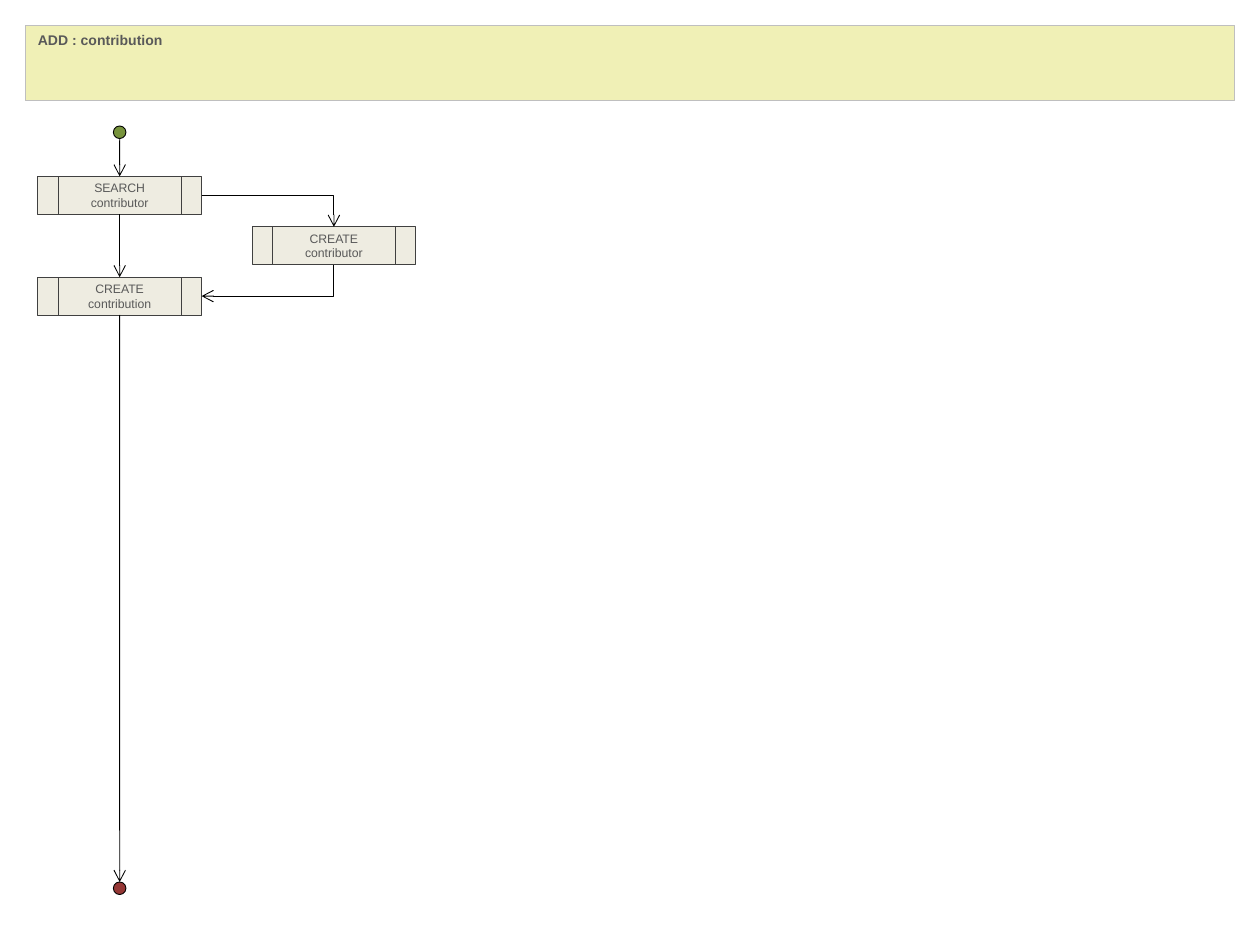
"""Build the flow diagram slide for adding a contribution."""
from lxml.etree import SubElement
from pptx import Presentation
from pptx.dml.color import RGBColor
from pptx.enum.shapes import MSO_CONNECTOR as CONNECTOR, MSO_SHAPE as SHAPE
from pptx.enum.text import MSO_ANCHOR as ANCHOR, MSO_AUTO_SIZE as AUTO_SIZE, PP_ALIGN as ALIGN
from pptx.oxml.ns import qn
from pptx.util import Inches, Pt

BLACK = RGBColor(0x00, 0x00, 0x00)
GREEN = RGBColor(0x77, 0x93, 0x3C)
RED = RGBColor(0x95, 0x37, 0x35)
YELLOW = RGBColor(0xF0, 0xF0, 0xB6)
BEIGE = RGBColor(0xEE, 0xEC, 0xE1)
LIGHT_GREY = RGBColor(0xBF, 0xBF, 0xBF)
DARK_GREY = RGBColor(0x40, 0x40, 0x40)
TEXT_GREY = RGBColor(0x59, 0x59, 0x59)

STEP_WIDTH, STEP_HEIGHT = 1.3, 0.3
DOT_SIZE = 0.1
MAIN_X = 0.95
SIDE_X = 2.65


def style_shape(shape, fill_color, line_color):
    shape.fill.solid()
    shape.fill.fore_color.rgb = fill_color
    shape.line.color.rgb = line_color
    shape.line.width = Pt(0.5)
    shape.shadow.inherit = False


def write_text(shape, text, align, anchor, font_format):
    frame = shape.text_frame
    frame.word_wrap = True
    frame.auto_size = AUTO_SIZE.NONE
    frame.vertical_anchor = anchor
    para = frame.paragraphs[0]
    para.alignment = align
    span = para.add_run()
    span.text = text
    for name, value in font_format.items():
        setattr(span.font, name, value)
    span.font.color.rgb = TEXT_GREY


deck = Presentation()
deck.slide_width, deck.slide_height = Inches(10), Inches(7.5)
page = deck.slides.add_slide(deck.slide_layouts[5])

title = page.shapes.title
title_place = {"left": 0.2, "top": 0.2, "width": 9.6, "height": 0.6}
for name, value in title_place.items():
    setattr(title, name, Inches(value))
style_shape(title, YELLOW, LIGHT_GREY)
title_font = {"name": "Arial", "size": Pt(8), "bold": True}
write_text(title, "ADD : contribution", ALIGN.LEFT, ANCHOR.TOP, title_font)

for top, color in [(1, GREEN), (7, RED)]:
    dot = page.shapes.add_shape(
        SHAPE.OVAL, Inches(MAIN_X - DOT_SIZE / 2), Inches(top), Inches(DOT_SIZE), Inches(DOT_SIZE))
    style_shape(dot, color, BLACK)

steps = {}
step_font = {"name": "Arial", "size": Pt(7)}
for text, center, top in [
    ("CREATE contributor", SIDE_X, 1.8),
    ("SEARCH contributor", MAIN_X, 1.4),
    ("CREATE contribution", MAIN_X, 2.2),
]:
    box = page.shapes.add_shape(
        SHAPE.FLOWCHART_PREDEFINED_PROCESS, Inches(center - STEP_WIDTH / 2), Inches(top),
        Inches(STEP_WIDTH), Inches(STEP_HEIGHT))
    style_shape(box, BEIGE, DARK_GREY)
    write_text(box, text, ALIGN.CENTER, ANCHOR.MIDDLE, step_font)
    steps[text] = box

search, create = steps["SEARCH contributor"], steps["CREATE contribution"]
arrows = []
for start, end, source, target in [
    (1.1, 1.4, None, search),
    (1.7, 2.2, search, create),
    (2.5, 7, create, None),
]:
    arrow = page.shapes.add_connector(
        CONNECTOR.STRAIGHT, Inches(MAIN_X), Inches(start), Inches(MAIN_X), Inches(end))
    if source:
        arrow.begin_connect(source, 2)
    if target:
        arrow.end_connect(target, 0)
    arrows.append(arrow)

for left, top, right, bottom, turn in [(1.6, 1.55, 2.65, 1.8, 0), (2, 1.7, 2.25, 2.75, 90)]:
    arrow = page.shapes.add_connector(
        CONNECTOR.ELBOW, Inches(left), Inches(top), Inches(right), Inches(bottom))
    properties = arrow.element.spPr
    properties.find(qn("a:prstGeom")).set("prst", "bentConnector2")
    properties.find(qn("a:xfrm")).set("rot", str(turn * 60000))
    arrows.append(arrow)

for arrow in arrows:
    arrow.line.color.rgb = BLACK
    arrow.line.width = Pt(0.5)
    properties = arrow.element.spPr
    SubElement(properties.find(qn("a:ln")), qn("a:tailEnd"), type="arrow")
    SubElement(properties, qn("a:effectLst"))

deck.save("out.pptx")
